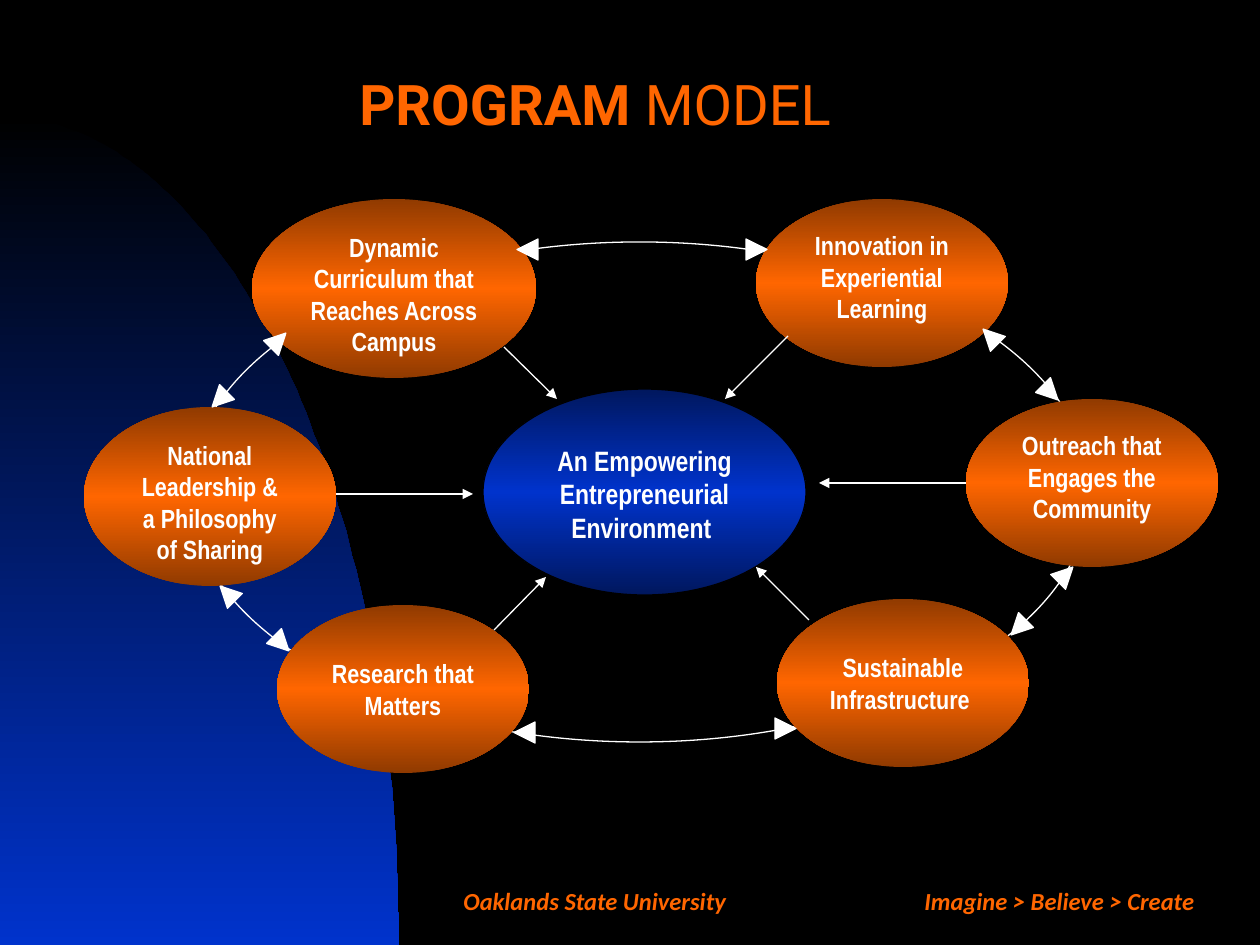
import math
from copy import deepcopy
from pptx import Presentation
from pptx import util as u
from pptx.dml.color import RGBColor
from pptx.enum import shapes, text
from pptx.oxml.ns import qn
from lxml import etree

SCALE = 914400 / 126  # EMU in one px
WIDE, HIGH = 1260, 945
BLACK = RGBColor(0x00, 0x00, 0x00)
WHITE = RGBColor(0xFF, 0xFF, 0xFF)
ORANGE = RGBColor(0xFF, 0x66, 0x00)
RUST = RGBColor(0x90, 0x3A, 0x00)
BLUE = RGBColor(0x00, 0x33, 0xCC)
NAVY = RGBColor(0x00, 0x17, 0x5E)
SHAPE = shapes.MSO_SHAPE
LEFT, CENTER = text.PP_ALIGN.LEFT, text.PP_ALIGN.CENTER
MIDDLE, TOP = text.MSO_ANCHOR.MIDDLE, text.MSO_ANCHOR.TOP


def emu(px):
    return u.Emu(round(px * SCALE))


class Deck:
    """Holds the slide and its shared line, text and gradient style."""
    line = u.Pt(0.75)

    def __init__(self):
        self.prs = Presentation()
        self.prs.slide_width, self.prs.slide_height = emu(WIDE), emu(HIGH)
        self.slide = self.prs.slides.add_slide(self.prs.slide_layouts[6])
        self.shapes = self.slide.shapes
        back = self.slide.background.fill
        back.solid()
        back.fore_color.rgb = BLACK

    def fade(self, shape, *colors):
        """Fill from top to bottom with evenly spaced colours."""
        fill = shape.fill
        fill.gradient()
        fill.gradient_angle = 270
        stops = shape._element.spPr.find(".//" + qn("a:gsLst"))
        while len(stops) < len(colors):
            stops.append(deepcopy(stops[0]))
        for i, (stop, color) in enumerate(zip(fill.gradient_stops, colors)):
            stop.position = i / (len(colors) - 1)
            stop.color.rgb = color

    def edge(self, shape, color=None):
        shape.shadow.inherit = False
        if color is None:
            shape.line.fill.background()
        else:
            shape.line.color.rgb = color
            shape.line.width = self.line

    def words(self, frame, parts, size, font, color, align, anchor):
        frame.word_wrap = True
        frame.vertical_anchor = anchor
        para = frame.paragraphs[0]
        para.alignment = align
        for part, bold, slant in parts:
            run = para.add_run()
            run.text = part
            face = run.font
            face.name, face.size, face.color.rgb = font, u.Pt(size), color
            face.bold, face.italic = bold, slant
        return para

    def label(self, box, parts, size, font):
        frame = self.shapes.add_textbox(*map(emu, box)).text_frame
        return self.words(frame, parts, size, font, ORANGE, LEFT, MIDDLE)

    def swell(self, wide, high, steps=90):
        """Quarter ellipse rising from the lower left corner."""
        arc = [(wide * math.sin(a), HIGH - high * math.cos(a))
               for a in (math.pi / 2 * i / steps for i in range(steps + 1))]
        pen = self.shapes.build_freeform(0, HIGH, scale=SCALE)
        pen.add_line_segments(arc, close=True)
        shape = pen.convert_to_shape()
        self.fade(shape, BLACK, BLUE)
        self.edge(shape)

    def ring(self, box):
        shape = self.shapes.add_shape(SHAPE.OVAL, *map(emu, box))
        shape.fill.background()
        self.edge(shape, WHITE)

    def oval(self, box, words, drop=0, size=15, dark=RUST, light=ORANGE, rim=None):
        """Shaded oval; drop lowers its text."""
        shape = self.shapes.add_shape(SHAPE.OVAL, *map(emu, box))
        self.fade(shape, dark, light, dark)
        self.edge(shape, rim)
        frame = shape.text_frame
        frame.margin_top = emu(6 + drop)
        self.words(frame, [(words, True, False)], size, "Arial Narrow", WHITE, CENTER, TOP)

    def head(self, x, y, turn, side=21):
        box = map(emu, (x, y, side, side))
        shape = self.shapes.add_shape(SHAPE.ISOSCELES_TRIANGLE, *box)
        shape.rotation = turn
        shape.fill.solid()
        shape.fill.fore_color.rgb = WHITE
        self.edge(shape, WHITE)

    def arrow(self, *ends):
        line = self.shapes.add_connector(shapes.MSO_CONNECTOR.STRAIGHT, *map(emu, ends))
        line.line.color.rgb = WHITE
        line.line.width = self.line
        props = line._element.spPr
        tail = etree.SubElement(props.find(qn("a:ln")), qn("a:tailEnd"))
        tail.set("type", "triangle")
        etree.SubElement(props, qn("a:effectLst"))


OVALS = [
    ((277, 605, 252, 168), "Research that Matters", 22),
    ((777, 599, 252, 168), "Sustainable Infrastructure ", 22),
    ((252, 199, 284, 179), "Dynamic Curriculum that Reaches Across Campus", 0),
    ((756, 199, 252, 168), "Innovation in Experiential Learning", 0),
    ((84, 407, 252, 179), "National Leadership & a Philosophy of Sharing", 0),
    ((966, 399, 252, 168), "Outreach that Engages the Community", 0),
]
HEADS = [
    (517, 239, 270), (217, 583, 315), (271, 633, 135), (1055, 564, 45),
    (268, 330, 45), (209, 389, 225), (1040, 382, 135), (980, 326, 315),
    (775, 718, 90), (1008, 617, 225), (514, 722, 270), (746, 239, 90),
]
ARROWS = [
    (336, 494, 473, 494), (966, 483, 819, 483), (504, 347, 557, 399),
    (788, 336, 725, 399), (494, 630, 546, 577), (809, 620, 756, 567),
]


def main():
    deck = Deck()
    deck.swell(399, 829)
    title = deck.label((347, 32, 683, 158),
                       [("PROGRAM", True, False), (" MODEL", False, False)], 32, "Roboto")
    title.line_spacing = 0.7
    deck.ring((189, 242, 901, 500))
    deck.oval((483, 389, 323, 206), "An Empowering Entrepreneurial Environment ",
              18, 16, NAVY, BLUE, BLACK)
    for item in OVALS:
        deck.oval(*item)
    for item in HEADS:
        deck.head(*item)
    for item in ARROWS:
        deck.arrow(*item)
    for x, wide, words in ((451, 440, "Oaklands State University"),
                           (912, 340, "Imagine > Believe > Create")):
        deck.label((x, 876, wide, 50), [(words, True, True)], 14, "Calibri")
    deck.prs.save("out.pptx")


if __name__ == "__main__":
    main()
